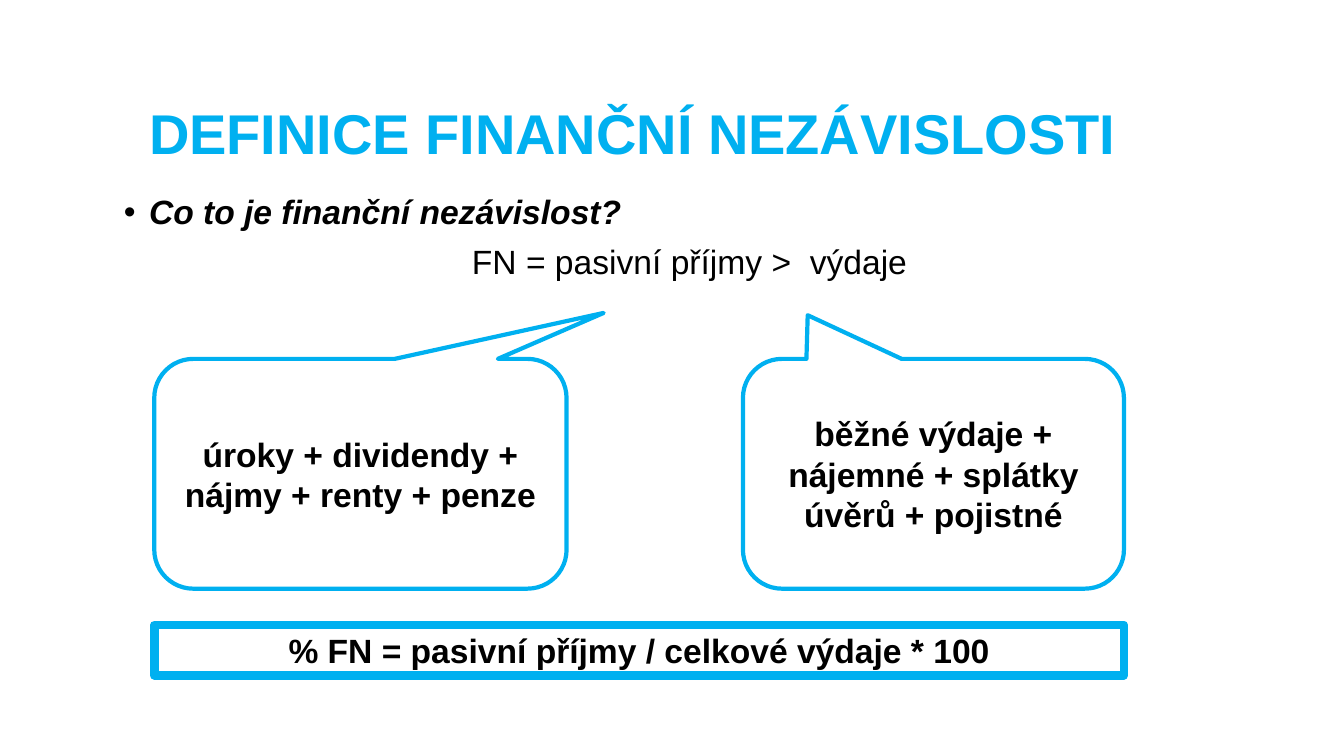
import dataclasses
import typing

import lxml.etree
import pptx
import pptx.dml.color
import pptx.enum.shapes
import pptx.enum.text
import pptx.oxml.ns
import pptx.util

COLORS = {"accent": "00B0F0", "text": "000000", "panel": "FFFFFF"}
SLIDE_WIDTH = pptx.util.Inches(40 / 3)
SLIDE_HEIGHT = pptx.util.Inches(7.5)
FONT = "Arial"
BODY_SIZE = 24
LEFT_EDGE, RIGHT_EDGE = 11.48, 83.63
CALLOUT_TOP, CALLOUT_HEIGHT = 47.47, 30.4
SHAPE_TYPES = pptx.enum.shapes.MSO_SHAPE
ALIGN = pptx.enum.text.PP_ALIGN


@dataclasses.dataclass(frozen=True)
class Area:
    left: float
    top: float
    width: float
    height: float

    def lengths(self) -> tuple[int, int, int, int]:
        return (
            round(SLIDE_WIDTH * self.left / 100),
            round(SLIDE_HEIGHT * self.top / 100),
            round(SLIDE_WIDTH * self.width / 100),
            round(SLIDE_HEIGHT * self.height / 100),
        )


@dataclasses.dataclass(frozen=True)
class Panel:
    text: str
    area: Area
    shape_type: typing.Any
    line_width: float
    adjustments: tuple[float, ...] = ()
    opacity: int = 0


PANELS = (
    Panel(
        "úroky + dividendy + nájmy + renty + penze",
        Area(LEFT_EDGE, CALLOUT_TOP, 30.68, CALLOUT_HEIGHT),
        SHAPE_TYPES.ROUNDED_RECTANGULAR_CALLOUT, 3, (0.59, -0.7, 0.17),
    ),
    Panel(
        "běžné výdaje + nájemné + splátky úvěrů + pojistné",
        Area(RIGHT_EDGE - 28.35, CALLOUT_TOP, 28.35, CALLOUT_HEIGHT),
        SHAPE_TYPES.ROUNDED_RECTANGULAR_CALLOUT, 3, (-0.33, -0.69, 0.17),
    ),
    Panel(
        "% FN = pasivní příjmy / celkové výdaje * 100",
        Area(LEFT_EDGE, 82.67, RIGHT_EDGE - LEFT_EDGE, 6.67),
        SHAPE_TYPES.RECTANGLE, 6, opacity=74,
    ),
)


def color(name: str) -> pptx.dml.color.RGBColor:
    return pptx.dml.color.RGBColor.from_string(COLORS[name])


def set_font(paragraph: typing.Any, size: float = BODY_SIZE, color_name: str = "text",
             bold: bool = True, italic: bool = False) -> None:
    font = paragraph.font
    font.name = FONT
    font.size = pptx.util.Pt(size)
    font.bold = bold
    font.italic = italic
    font.color.rgb = color(color_name)


def place(shape: typing.Any, area: Area) -> None:
    shape.left, shape.top, shape.width, shape.height = area.lengths()


def set_indent(paragraph: typing.Any, margin: float, first_line: float = 0) -> typing.Any:
    properties = paragraph._p.get_or_add_pPr()
    properties.set("marL", str(pptx.util.Inches(margin)))
    properties.set("indent", str(pptx.util.Inches(first_line)))
    return properties


def draw_title(slide: typing.Any) -> None:
    title = slide.shapes.title
    place(title, Area(10.35, 13.2, 84.68, 9.73))
    frame = title.text_frame
    frame.text = "DEFINICE FINANČNÍ NEZÁVISLOSTI"
    frame.auto_size = pptx.enum.text.MSO_AUTO_SIZE.NONE
    frame.vertical_anchor = pptx.enum.text.MSO_ANCHOR.MIDDLE
    paragraph = frame.paragraphs[0]
    paragraph.alignment = ALIGN.LEFT
    paragraph.line_spacing = 0.9
    set_font(paragraph, 40, "accent")


def draw_definition(slide: typing.Any) -> None:
    frame = slide.shapes.add_textbox(*Area(8.48, 25.2, 69.75, 16.13).lengths()).text_frame
    frame.word_wrap = True
    question = frame.paragraphs[0]
    question.text = "Co to je finanční nezávislost?"
    question.line_spacing = 0.9
    properties = set_indent(question, 0.25, -0.25)
    tag = pptx.oxml.ns.qn
    lxml.etree.SubElement(properties, tag("a:buFont"), typeface=FONT)
    lxml.etree.SubElement(properties, tag("a:buChar"), char="•")
    set_font(question, italic=True)

    formula = frame.add_paragraph()
    formula.text = "FN = pasivní příjmy >  výdaje"
    formula.alignment = ALIGN.CENTER
    formula.line_spacing = 0.9
    formula.space_before = pptx.util.Pt(10)
    set_indent(formula, 2.12)
    set_font(formula, bold=False)


def draw_panel(slide: typing.Any, panel: Panel) -> None:
    shape = slide.shapes.add_shape(panel.shape_type, *panel.area.lengths())
    shape.shadow.inherit = False
    for index, value in enumerate(panel.adjustments):
        shape.adjustments[index] = value
    if panel.opacity:
        shape.fill.solid()
        shape.fill.fore_color.rgb = color("panel")
        fill_color = shape._element.spPr.find(".//" + pptx.oxml.ns.qn("a:srgbClr"))
        lxml.etree.SubElement(fill_color, pptx.oxml.ns.qn("a:alpha"), val=str(panel.opacity * 1000))
    else:
        shape.fill.background()
    shape.line.color.rgb = color("accent")
    shape.line.width = pptx.util.Pt(panel.line_width)
    frame = shape.text_frame
    frame.word_wrap = True
    frame.vertical_anchor = pptx.enum.text.MSO_ANCHOR.MIDDLE
    paragraph = frame.paragraphs[0]
    paragraph.text = panel.text
    paragraph.alignment = ALIGN.CENTER
    set_font(paragraph)


def main() -> None:
    presentation = pptx.Presentation()
    presentation.slide_width = SLIDE_WIDTH
    presentation.slide_height = SLIDE_HEIGHT
    slide = presentation.slides.add_slide(presentation.slide_layouts.get_by_name("Title Only"))
    draw_title(slide)
    draw_definition(slide)
    for panel in PANELS:
        draw_panel(slide, panel)
    presentation.save("out.pptx")


if __name__ == "__main__":
    main()
